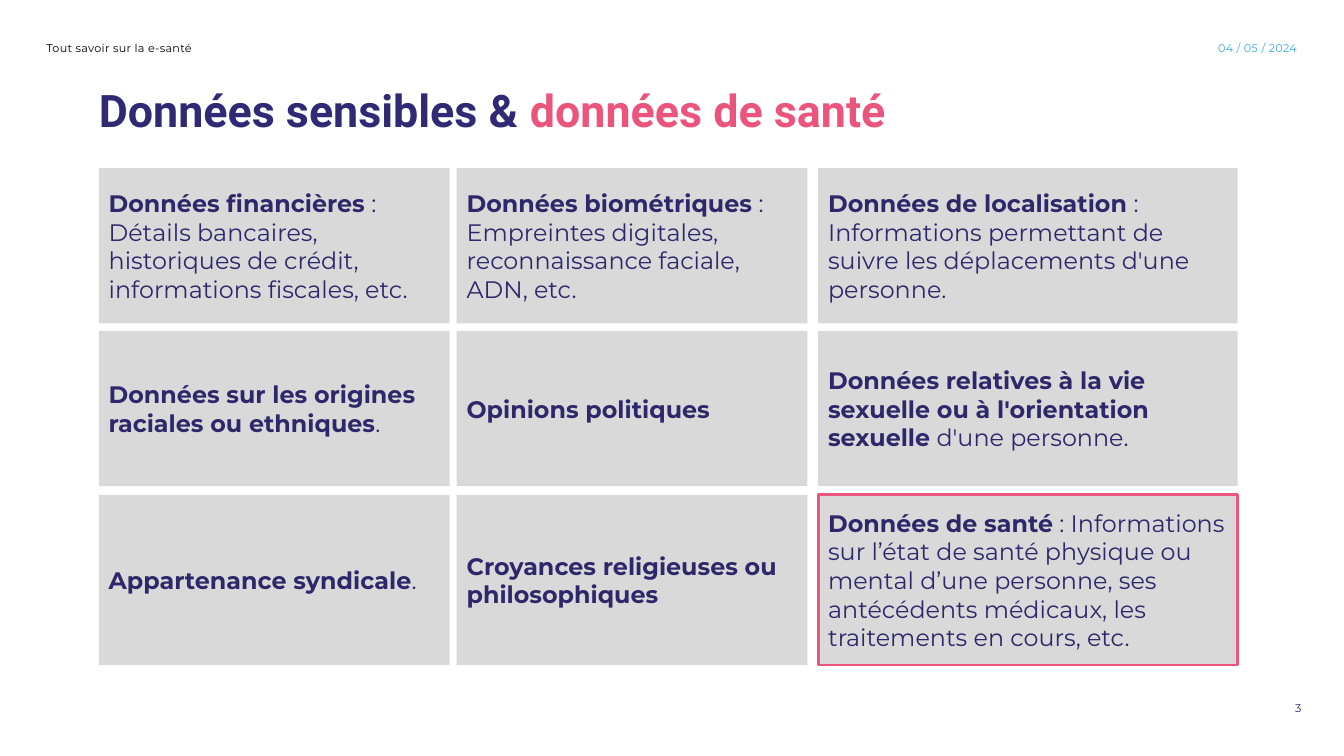
import pptx
import pptx.util
import pptx.dml.color
import pptx.enum.shapes
import pptx.enum.text

Cm, Pt = pptx.util.Cm, pptx.util.Pt
Align = pptx.enum.text.PP_ALIGN
Anchor = pptx.enum.text.MSO_ANCHOR
HUES = {"navy": "302973", "ink": "2E286A", "pink": "EB557B",
        "grey": "D9D9D9", "sky": "36A9E0", "black": "000000"}


def tint(name):
    return pptx.dml.color.RGBColor.from_string(HUES[name])


class Page:
    font = "Montserrat"

    def __init__(self, slide):
        self.slide = slide

    def say(self, para, text, size, hue, bold=False, font=None, space=0):
        """Add one styled run to a paragraph."""
        run = para.add_run()
        run.text = text
        run.font.name = font or self.font
        run.font.size = Pt(size)
        run.font.bold = bold
        run.font.color.rgb = tint(hue)
        if space:
            run._r.get_or_add_rPr().set("spc", str(space))

    def label(self, box, align=Align.LEFT, anchor=Anchor.TOP, pad=(0, 0)):
        """Add an empty text box and return its paragraph."""
        frame = self.slide.shapes.add_textbox(*map(Cm, box)).text_frame
        frame.word_wrap = True
        frame.vertical_anchor = anchor
        frame.margin_left = frame.margin_right = Cm(pad[0])
        frame.margin_top = frame.margin_bottom = Cm(pad[1])
        para = frame.paragraphs[0]
        para.alignment = align
        return para

    def card(self, box, head, tail, edge=None):
        """Add a grey box with a bold head and a plain tail."""
        shape = self.slide.shapes.add_shape(
            pptx.enum.shapes.MSO_SHAPE.RECTANGLE, *map(Cm, box))
        shape.shadow.inherit = False
        shape.fill.solid()
        shape.fill.fore_color.rgb = tint("grey")
        if edge:
            shape.line.color.rgb = tint(edge)
            shape.line.width = Pt(2)
        else:
            shape.line.fill.background()
        frame = shape.text_frame
        frame.word_wrap = True
        frame.vertical_anchor = Anchor.MIDDLE
        para = frame.paragraphs[0]
        para.alignment = Align.LEFT
        self.say(para, head, 17, "ink", bold=True)
        if tail:
            self.say(para, tail, 17, "ink")


deck = pptx.Presentation()
deck.slide_width, deck.slide_height = Cm(33.87), Cm(19.05)
page = Page(deck.slides.add_slide(deck.slide_layouts[6]))

# Header
date = page.label((28.63, 0.94, 4.06, 0.53), Align.RIGHT, pad=(0, 0.1))
page.say(date, "04 / 05 / 2024", 8, "sky", space=20)
topic = page.label((1.17, 0.94, 6.78, 0.53), pad=(0, 0.1))
page.say(topic, "Tout savoir sur la e-santé", 8, "black", space=20)

# Title
title = page.label((2.49, 2.36, 26.14, 2.31))
title.line_spacing = Pt(30.4)
title.space_after = Pt(12)
page.say(title, "Données sensibles & ", 32, "navy", True, "Roboto")
page.say(title, "données de santé", 32, "pink", True, "Roboto")

# Grid of cards: (start, size) of each column and row
COLS = [(2.49, 8.84), (11.51, 8.84), (20.62, 10.57)]
ROWS = [(4.24, 3.91), (8.34, 3.91), (12.47, 4.29)]
CARDS = [
    [("Données financières",
      " : Détails bancaires, historiques de crédit, informations fiscales, etc."),
     ("Données biométriques",
      " : Empreintes digitales, reconnaissance faciale, ADN, etc."),
     ("Données de localisation",
      " : Informations permettant de suivre les déplacements d'une personne.")],
    [("Données sur les origines raciales ou ethniques", "."),
     ("Opinions politiques", ""),
     ("Données relatives à la vie sexuelle ou à l'orientation sexuelle",
      " d'une personne.")],
    [("Appartenance syndicale", "."),
     ("Croyances religieuses ou philosophiques", ""),
     ("Données de santé",
      " : Informations sur l’état de santé physique ou mental d’une personne, "
      "ses antécédents médicaux, les traitements en cours, etc.")],
]
for (top, height), line in zip(ROWS, CARDS):
    for (left, width), (head, tail) in zip(COLS, line):
        edge = "pink" if head == "Données de santé" else None
        page.card((left, top, width, height), head, tail, edge)

# Page number
number = page.label((27.97, 17.27, 4.93, 1.12), Align.RIGHT,
                    Anchor.MIDDLE, (0.1, 0.15))
page.say(number, "3", 8, "navy")

deck.save("out.pptx")
